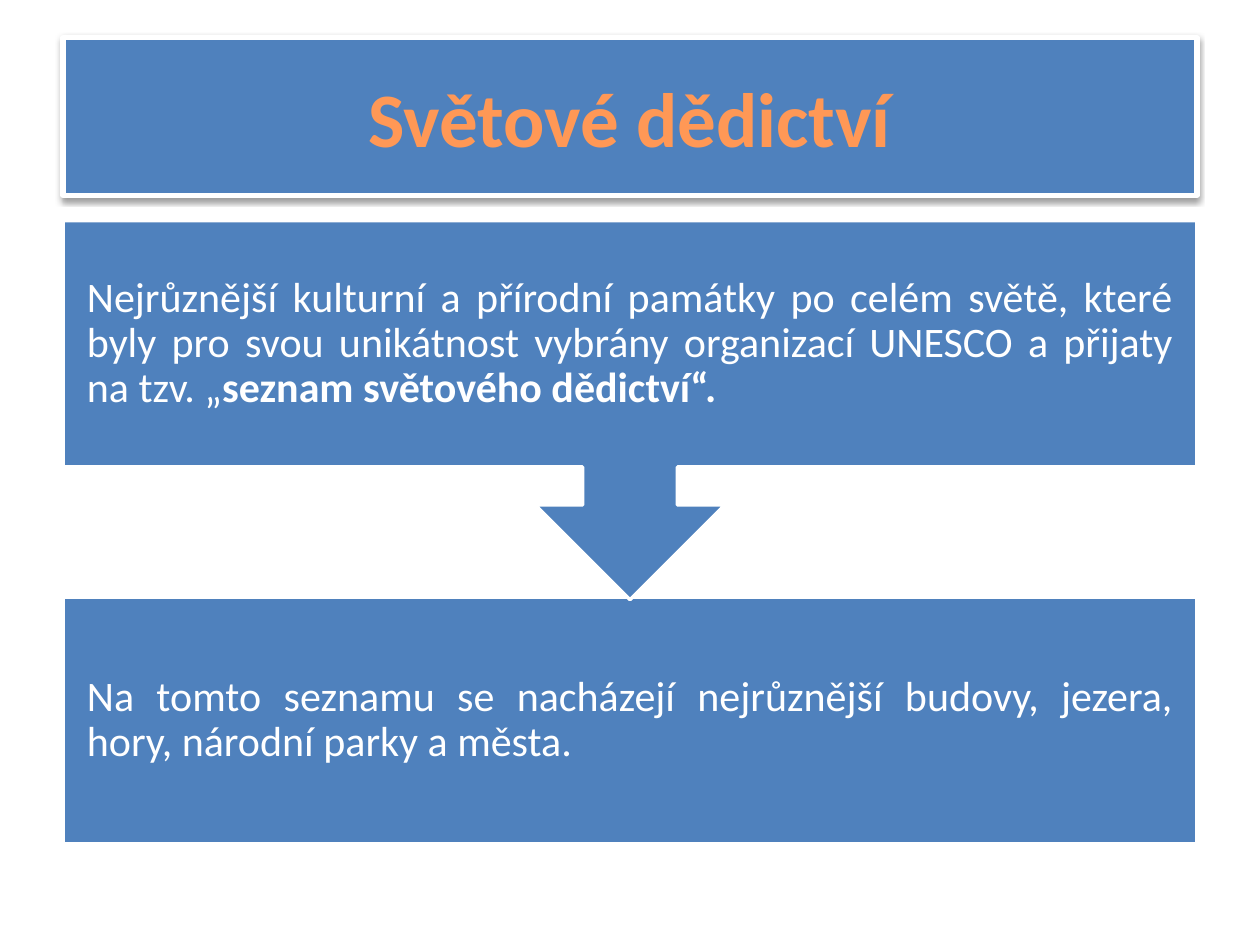
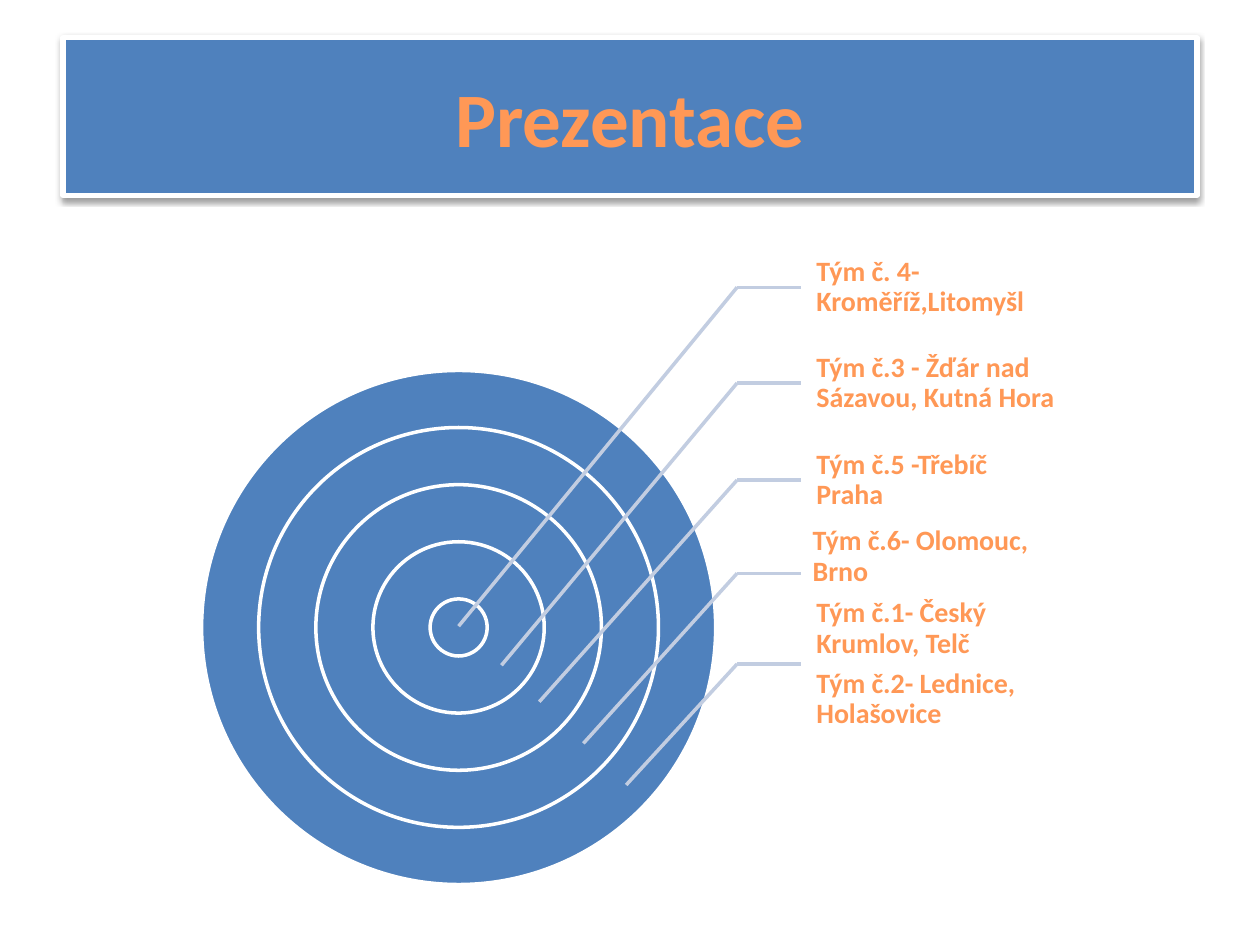
from dataclasses import dataclass

from lxml import etree
from pptx import Presentation
from pptx.dml.color import RGBColor
from pptx.enum.shapes import MSO_CONNECTOR, MSO_SHAPE
from pptx.enum.text import MSO_ANCHOR, PP_ALIGN
from pptx.oxml.ns import qn
from pptx.util import Inches, Pt

RECTANGLE, ELLIPSE = MSO_SHAPE.RECTANGLE, MSO_SHAPE.OVAL
CALLOUT = MSO_SHAPE.UP_ARROW_CALLOUT
STRAIGHT = MSO_CONNECTOR.STRAIGHT
MIDDLE = MSO_ANCHOR.MIDDLE
LEFT, CENTER, JUSTIFY = PP_ALIGN.LEFT, PP_ALIGN.CENTER, PP_ALIGN.JUSTIFY

BLUE = RGBColor(0x4F, 0x81, 0xBD)
WHITE = RGBColor(0xFF, 0xFF, 0xFF)
ORANGE = RGBColor(0xFF, 0x98, 0x56)
PALE_BLUE = RGBColor(0xC2, 0xCD, 0xE1)

MARGIN, CONTENT_WIDTH = 0.5, 9
RING_COUNT = 5
RING_CENTER = (3.64, 4.98)
RING_DIAMETER = 4.08
ELBOW_X, LABEL_X = 5.85, 6.36
LABEL_WIDTH, LABEL_HEIGHT = 2.04, 0.72


@dataclass(frozen=True)
class TextStyle:
    size: float
    color: RGBColor
    bold: bool = False
    align: PP_ALIGN = LEFT
    line_spacing: float = 0.9
    insets: tuple = (0.1, 0.05, 0.1, 0.05)  # left, top, right, bottom


@dataclass(frozen=True)
class Card:
    shape: MSO_SHAPE
    top: float
    height: float
    rotation: int
    runs: tuple  # (text, bold)


@dataclass(frozen=True)
class TeamLabel:
    teams: tuple
    elbow_y: float
    target: tuple
    offset: tuple = (0, 0)


TITLE_STYLE = TextStyle(44, ORANGE, True, CENTER, 1.0)
CARD_STYLE = TextStyle(24, WHITE, False, JUSTIFY, insets=(0.19,) * 4)
LABEL_STYLE = TextStyle(16, ORANGE, True, insets=(0.12, 0.02, 0.02, 0.02))

CARD_TEXT_HEIGHT = 1.96
CARDS = (
    Card(RECTANGLE, 4.74, 1.96, 0, (
        ("Na tomto seznamu se nacházejí nejrůznější budovy, jezera, hory, "
         "národní parky a města.", False),
    )),
    Card(CALLOUT, 1.75, 3.01, 180, (
        ("Nejrůznější kulturní a přírodní památky po celém světě, které byly "
         "pro svou unikátnost vybrány organizací UNESCO a přijaty na tzv. „", False),
        ("seznam světového dědictví“.", True),
    )),
)

TEAM_LABELS = (
    TeamLabel(("Tým č. 4- Kroměříž,Litomyšl",), 2.28, (3.64, 4.97)),
    TeamLabel(("Tým č.3 - Žďár nad Sázavou, Kutná Hora",), 3.04, (3.98, 5.28)),
    TeamLabel(("Tým č.5 -Třebíč Praha",), 3.81, (4.28, 5.57)),
    TeamLabel(("Tým č.6- Olomouc, Brno",), 4.55, (4.63, 5.9), (-0.03, -0.13)),
    TeamLabel(("Tým č.1- Český Krumlov, Telč", "Tým č.2- Lednice, Holašovice"),
              5.27, (4.97, 6.23)),
)


def apply_format(target, values: dict) -> None:
    for name, value in values.items():
        setattr(target, name, value)


def write_text(frame, paragraphs: tuple, style: TextStyle) -> None:
    """Fill a text frame; every paragraph is a tuple of (text, bold) runs."""
    sides = ("margin_left", "margin_top", "margin_right", "margin_bottom")
    apply_format(frame, {"word_wrap": True, "vertical_anchor": MIDDLE,
                         **dict(zip(sides, map(Inches, style.insets)))})
    for index, runs in enumerate(paragraphs):
        paragraph = frame.add_paragraph() if index else frame.paragraphs[0]
        apply_format(paragraph, {
            "alignment": style.align, "line_spacing": style.line_spacing,
            "space_before": Pt(0.35 * style.size if index else 0)})
        for text, bold in runs:
            run = paragraph.add_run()
            run.text = text
            apply_format(run.font, {"name": "Calibri", "size": Pt(style.size),
                                    "bold": bold})
            run.font.color.rgb = style.color


def add_blue_shape(slide, kind: MSO_SHAPE, box: tuple, line_width: float = 2):
    shape = slide.shapes.add_shape(kind, *map(Inches, box))
    shape.shadow.inherit = False
    shape.fill.solid()
    shape.fill.fore_color.rgb = BLUE
    shape.line.color.rgb = WHITE
    shape.line.width = Pt(line_width)
    return shape


def add_text(slide, box: tuple, paragraphs: tuple, style: TextStyle) -> None:
    text_box = slide.shapes.add_textbox(*map(Inches, box))
    write_text(text_box.text_frame, paragraphs, style)


def add_title_band(slide, title: str) -> None:
    band = add_blue_shape(slide, RECTANGLE, (MARGIN, 0.3, CONTENT_WIDTH, 1.25), 3)
    write_text(band.text_frame, (((title, True),),), TITLE_STYLE)
    # Soft shadow below the band
    effects = band._element.spPr.find(qn("a:effectLst"))
    shadow = etree.SubElement(effects, qn("a:outerShdw"), blurRad=str(Pt(3.1)),
                              dist=str(Pt(1.6)), dir="5400000", rotWithShape="0")
    color = etree.SubElement(shadow, qn("a:srgbClr"), val="000000")
    etree.SubElement(color, qn("a:alpha"), val="38000")


def add_leader(slide, start: tuple, end: tuple) -> None:
    leader = slide.shapes.add_connector(STRAIGHT, *map(Inches, start + end))
    leader.line.color.rgb = PALE_BLUE
    leader.line.width = Pt(2)
    etree.SubElement(leader._element.spPr, qn("a:effectLst"))


def add_card(slide, card: Card) -> None:
    shape = add_blue_shape(slide, card.shape,
                           (MARGIN, card.top, CONTENT_WIDTH, card.height))
    shape.rotation = card.rotation
    add_text(slide, (MARGIN, card.top, CONTENT_WIDTH, CARD_TEXT_HEIGHT),
             (card.runs,), CARD_STYLE)


def add_rings(slide) -> None:
    center_x, center_y = RING_CENTER
    parts = 2 * RING_COUNT - 1
    for odd in range(parts, 0, -2):
        diameter = RING_DIAMETER * odd / parts
        add_blue_shape(slide, ELLIPSE, (center_x - diameter / 2,
                                        center_y - diameter / 2, diameter, diameter))


def add_team_label(slide, label: TeamLabel) -> None:
    shift_x, shift_y = label.offset
    box = (LABEL_X + shift_x, label.elbow_y - LABEL_HEIGHT / 2 + shift_y,
           LABEL_WIDTH, LABEL_HEIGHT)
    add_text(slide, box, tuple(((team, True),) for team in label.teams), LABEL_STYLE)
    elbow = (ELBOW_X, label.elbow_y)
    for end in ((LABEL_X, label.elbow_y), label.target):
        add_leader(slide, elbow, end)


def main() -> None:
    presentation = Presentation()
    presentation.slide_width, presentation.slide_height = Inches(10), Inches(7.5)
    blank = presentation.slide_layouts[6]

    # World heritage: definition leading to examples
    heritage = presentation.slides.add_slide(blank)
    add_title_band(heritage, "Světové dědictví")
    for card in CARDS:
        add_card(heritage, card)

    # Team presentations: target diagram with labels
    teams = presentation.slides.add_slide(blank)
    add_title_band(teams, "Prezentace")
    add_rings(teams)
    for label in TEAM_LABELS:
        add_team_label(teams, label)

    presentation.save("out.pptx")


if __name__ == "__main__":
    main()
